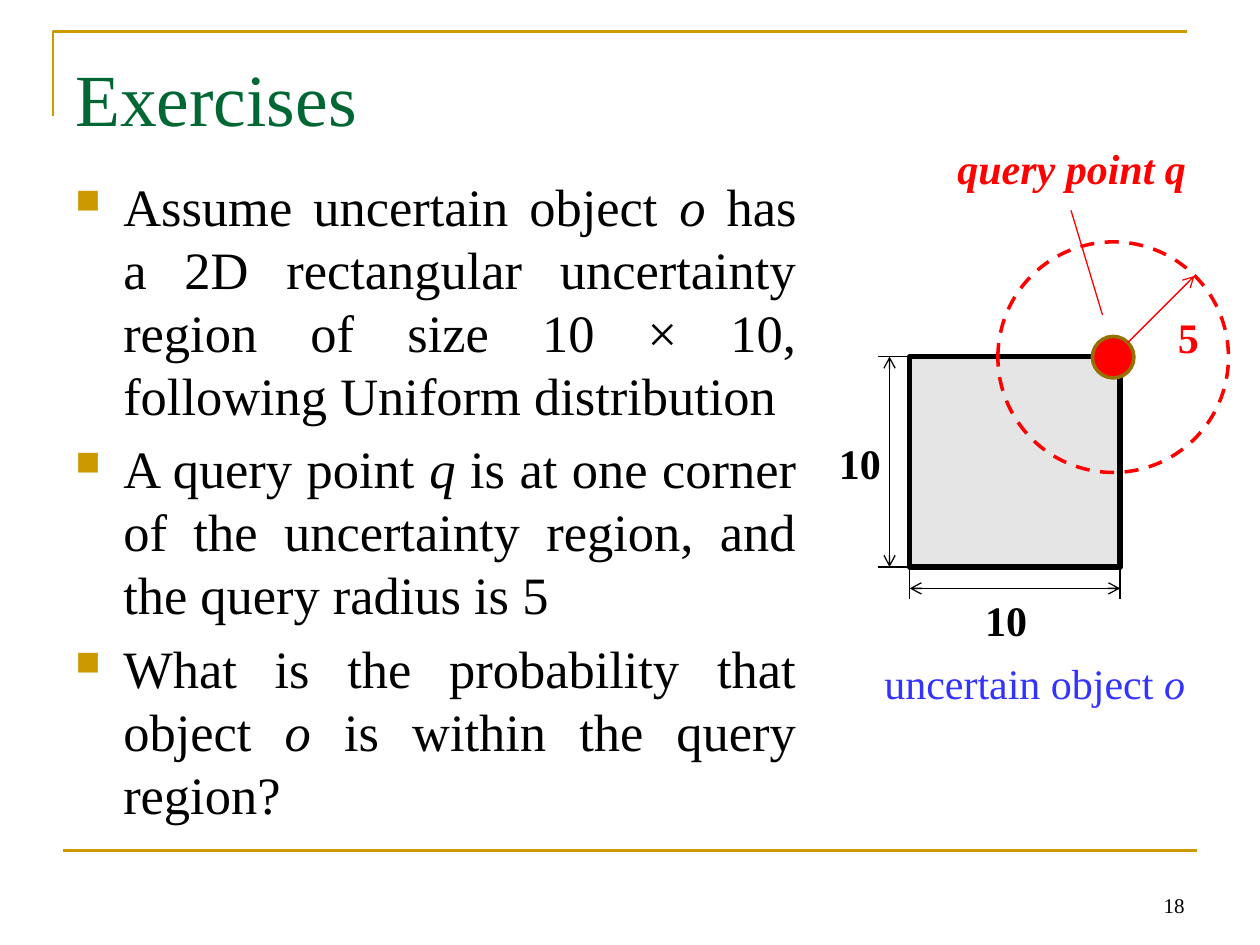
from dataclasses import dataclass

from pptx import Presentation
from pptx import util as u
from pptx.dml.color import RGBColor
from pptx.enum import dml, shapes, text
from pptx.oxml.ns import qn
from pptx.oxml.xmlchemy import OxmlElement

PX = 9144  # EMU per px, 100 px to the inch


@dataclass(frozen=True)
class Theme:
    font: str = "Times New Roman"
    gold: str = "CC9900"
    green: str = "006633"
    black: str = "000000"
    red: str = "FF0000"
    blue: str = "3333FF"
    brown: str = "977100"
    title: int = 42
    body: int = 30
    label: int = 24
    small: int = 12


T = Theme()

# Each paragraph is a list of (text, italic) runs
POINTS = [
    [("Assume uncertain object ", False), ("o", True),
     (" has a 2D rectangular uncertainty region of size 10 × 10, "
      "following Uniform distribution", False)],
    [("A query point ", False), ("q", True),
     (" is at one corner of the uncertainty region, "
      "and the query radius is 5", False)],
    [("What is the probability that object ", False), ("o", True),
     (" is within the query region?", False)],
]


def px(*vals):
    return [u.Emu(v * PX) for v in vals]


def rgb(color):
    return RGBColor.from_string(color)


def node(parent, tag, **attrs):
    item = OxmlElement(tag)
    for key, val in attrs.items():
        item.set(key, str(val))
    parent.append(item)
    return item


def fill_runs(para, runs, size, color, bold=False):
    for words, slant in runs:
        run = para.add_run()
        run.text = words
        font = run.font
        font.name, font.size = T.font, u.Pt(size)
        font.bold, font.italic = bold, slant
        font.color.rgb = rgb(color)


def add_text(pool, box, runs, size, color, bold=False, wrap=False):
    frame = pool.add_textbox(*px(*box)).text_frame
    frame.word_wrap = wrap
    fill_runs(frame.paragraphs[0], runs, size, color, bold)
    return frame


def add_line(pool, start, end, color, width=0.75, head=False, tail=False):
    link = pool.add_connector(shapes.MSO_CONNECTOR.STRAIGHT,
                              *px(*start, *end))
    link.line.color.rgb = rgb(color)
    link.line.width = u.Pt(width)
    props = link.element.spPr
    ln = props.find(qn("a:ln"))
    for tag, shown in (("a:headEnd", head), ("a:tailEnd", tail)):
        if shown:
            node(ln, tag, type="arrow")
    node(props, "a:effectLst")


def add_form(pool, kind, box, line, width, fill=None, alpha=None):
    form = pool.add_shape(kind, *px(*box))
    form.shadow.inherit = False
    form.line.color.rgb = rgb(line)
    form.line.width = u.Pt(width)
    if fill is None:
        form.fill.background()
    else:
        form.fill.solid()
        form.fill.fore_color.rgb = rgb(fill)
    if alpha is not None:
        shade = form.element.spPr.find(qn("a:solidFill"))[0]
        node(shade, "a:alpha", val=alpha * 1000)
    return form


def add_frame(pool):
    # Corner rule at the top, straight rule at the foot
    path = pool.build_freeform(42, 92, scale=PX)
    path.add_line_segments([(42, 25), (942, 25)], close=False)
    edge = path.convert_to_shape()
    edge.shadow.inherit = False
    edge.fill.background()
    edge.line.color.rgb = rgb(T.gold)
    edge.line.width = u.Pt(1.5)
    add_line(pool, (50, 675), (950, 675), T.gold, 1.5)


def add_points(pool):
    frame = pool.add_textbox(*px(50, 133, 592, 537)).text_frame
    frame.word_wrap = True
    for num, runs in enumerate(POINTS):
        para = frame.add_paragraph() if num else frame.paragraphs[0]
        para.alignment = text.PP_ALIGN.JUSTIFY
        para.space_before = u.Pt(6)
        para.line_spacing = u.Pt(36)
        props = para._p.get_or_add_pPr()
        props.set("marL", str(38 * PX))
        props.set("indent", str(-38 * PX))
        node(node(props, "a:buClr"), "a:srgbClr", val=T.gold)
        node(props, "a:buSzPct", val=65000)
        node(props, "a:buChar", char="■")
        fill_runs(para, runs, T.body, T.black)


def add_object(pool):
    # Square region with its two dimension lines
    group = pool.add_group_shape().shapes
    left, top, side = 722, 283, 167
    right, foot = left + side, top + side
    add_form(group, shapes.MSO_SHAPE.RECTANGLE, (left, top, side, side),
             T.black, 3, T.black, 10)
    for x in (left, right):
        add_line(group, (x, foot), (x, foot + 25), T.black)
    for y in (top, foot):
        add_line(group, (left, y), (left - 25, y), T.black)
    for start, end in (((left, foot + 17), (right, foot + 17)),
                       ((left - 16, top), (left - 16, foot))):
        add_line(group, start, end, T.black, head=True, tail=True)
    for x, y in ((772, 467), (656, 342)):
        add_text(group, (x, y, 54, 50), [("10", False)],
                 T.label, T.black, bold=True)
    add_text(pool, (692, 517, 261, 50),
             [("uncertain object ", False), ("o", True)], T.label, T.blue)


def add_query(pool):
    # Query point, its range and radius
    oval = shapes.MSO_SHAPE.OVAL
    add_form(pool, oval, (867, 267, 33, 33), T.brown, 2, T.red)
    ring = add_form(pool, oval, (792, 192, 183, 183), T.red, 2)
    ring.line.dash_style = dml.MSO_LINE.DASH
    add_line(pool, (895, 272), (948, 219), T.red, tail=True)
    add_text(pool, (925, 242, 37, 50), [("5", False)],
             T.label, T.red, bold=True)
    add_text(pool, (750, 108, 203, 50), [("query point q", True)],
             T.label, T.red, bold=True)
    add_line(pool, (875, 250), (850, 167), T.red)


def main():
    deck = Presentation()
    deck.slide_width, deck.slide_height = px(1000, 750)
    pool = deck.slides.add_slide(deck.slide_layouts[6]).shapes

    add_frame(pool)
    title = add_text(pool, (50, 30, 900, 125), [("Exercises", False)],
                     T.title, T.green, wrap=True)
    title.margin_top = px(12)[0]
    add_points(pool)

    # Page number
    page = add_text(pool, (717, 683, 233, 50), [("18", False)],
                    T.small, T.black, wrap=True)
    page.vertical_anchor = text.MSO_ANCHOR.BOTTOM
    page.paragraphs[0].alignment = text.PP_ALIGN.RIGHT

    add_object(pool)
    add_query(pool)
    deck.save("out.pptx")


if __name__ == "__main__":
    main()
